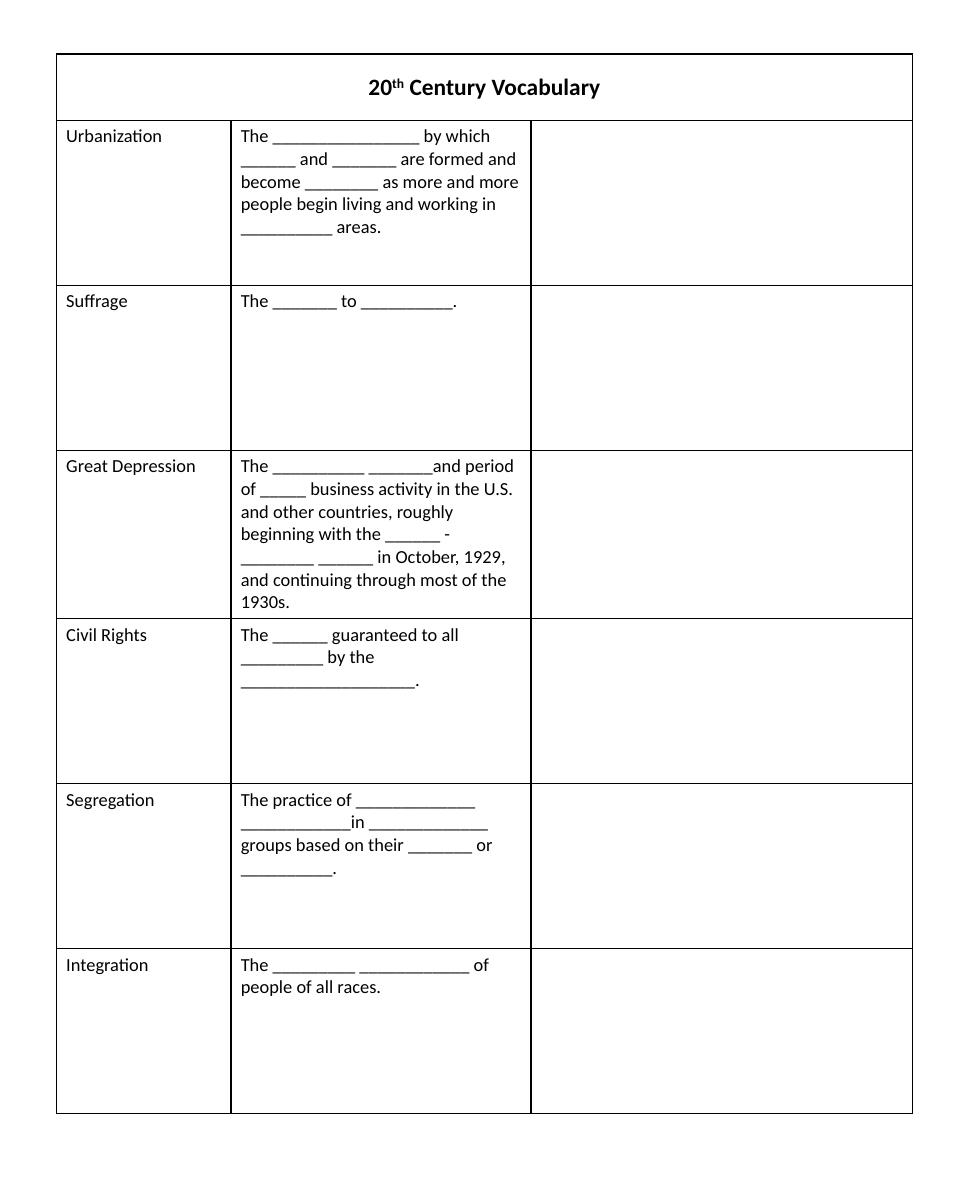
import pptx
import pptx.dml.color
import pptx.enum.text
import pptx.oxml
import pptx.oxml.ns
import pptx.util
from pptx.util import Inches

COLORS = {"ink": "000000", "paper": "FFFFFF"}
FONT = "Calibri"
COLUMN_WIDTHS = [1.45, 2.49, 3.17]
TITLE_HEIGHT = 0.55
TITLE = [("20", 0), ("th", 30), (" Century Vocabulary", 0)]
VOCABULARY = [
    ("Urbanization", "The ________________ by which ______ and _______ are formed and become ________ "
                     "as more and more people begin living and working in __________ areas."),
    ("Suffrage", "The _______ to __________."),
    ("Great Depression", "The __________ _______and period of _____ business activity in the U.S. "
                         "and other countries, roughly beginning with the ______ - ________ ______ "
                         "in October, 1929, and continuing through most of the 1930s."),
    ("Civil Rights", "The ______ guaranteed to all _________ by the ___________________."),
    ("Segregation", "The practice of _____________ ____________in _____________ groups "
                    "based on their _______ or __________."),
    ("Integration", "The _________ ____________ of people of all races."),
]


def rgb(name):
    return pptx.dml.color.RGBColor.from_string(COLORS[name])


def add_text(p, text, size=11, bold=False, color="ink", raised=0):
    r = p.add_run()
    r.text = text
    r.font.name = FONT
    r.font.size = pptx.util.Pt(size)
    r.font.bold = bold
    r.font.color.rgb = rgb(color)
    if raised:
        r.font._element.set("baseline", str(raised * 1000))


def format_cell(cell):
    cell.margin_left = cell.margin_right = Inches(0.08)
    cell.margin_top = cell.margin_bottom = Inches(0.04)
    cell.fill.solid()
    cell.fill.fore_color.rgb = rgb("paper")
    tcPr = cell._tc.get_or_add_tcPr()
    for i, side in enumerate("LRTB"):
        tcPr.insert(i, pptx.oxml.parse_xml(
            f'<a:ln{side} {pptx.oxml.ns.nsdecls("a")} w="12700"><a:solidFill>'
            f'<a:srgbClr val="{COLORS["ink"]}"/></a:solidFill></a:ln{side}>'))


def add_vocabulary_table(slide, left, top, width, height):
    table = slide.shapes.add_table(
        len(VOCABULARY) + 1, len(COLUMN_WIDTHS),
        Inches(left), Inches(top), Inches(width), Inches(height)).table
    table.first_row = table.horz_banding = False
    for column, share in zip(table.columns, COLUMN_WIDTHS):
        column.width = Inches(width * share / sum(COLUMN_WIDTHS))
    for i, row in enumerate(table.rows):
        row.height = Inches((height - TITLE_HEIGHT) / len(VOCABULARY) if i else TITLE_HEIGHT)
    for cell in table.iter_cells():
        format_cell(cell)

    title = table.cell(0, 0)
    title.merge(table.cell(0, len(COLUMN_WIDTHS) - 1))
    title.vertical_anchor = pptx.enum.text.MSO_ANCHOR.MIDDLE
    p = title.text_frame.paragraphs[0]
    p.alignment = pptx.enum.text.PP_ALIGN.CENTER
    for text, raised in TITLE:
        add_text(p, text, size=14, bold=True, raised=raised)

    for i, entry in enumerate(VOCABULARY, start=1):
        for j, text in enumerate(entry):
            add_text(table.cell(i, j).text_frame.paragraphs[0], text)


def main():
    prs = pptx.Presentation()
    prs.slide_width, prs.slide_height = Inches(8), Inches(10)
    slide = prs.slides.add_slide(prs.slide_layouts[6])
    add_vocabulary_table(slide, 0.47, 0.45, 7.11, 8.77)
    prs.save("out.pptx")


if __name__ == "__main__":
    main()
